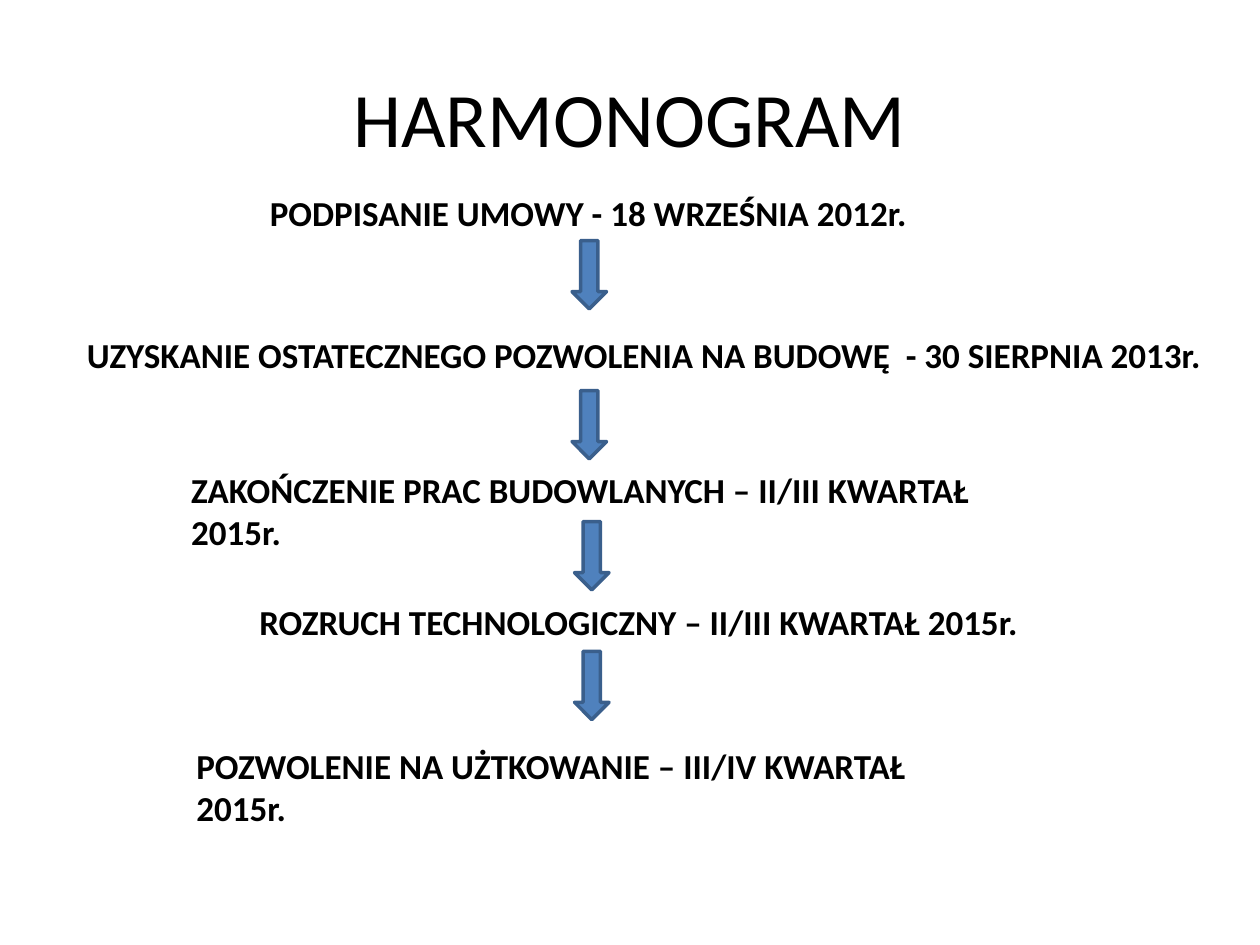
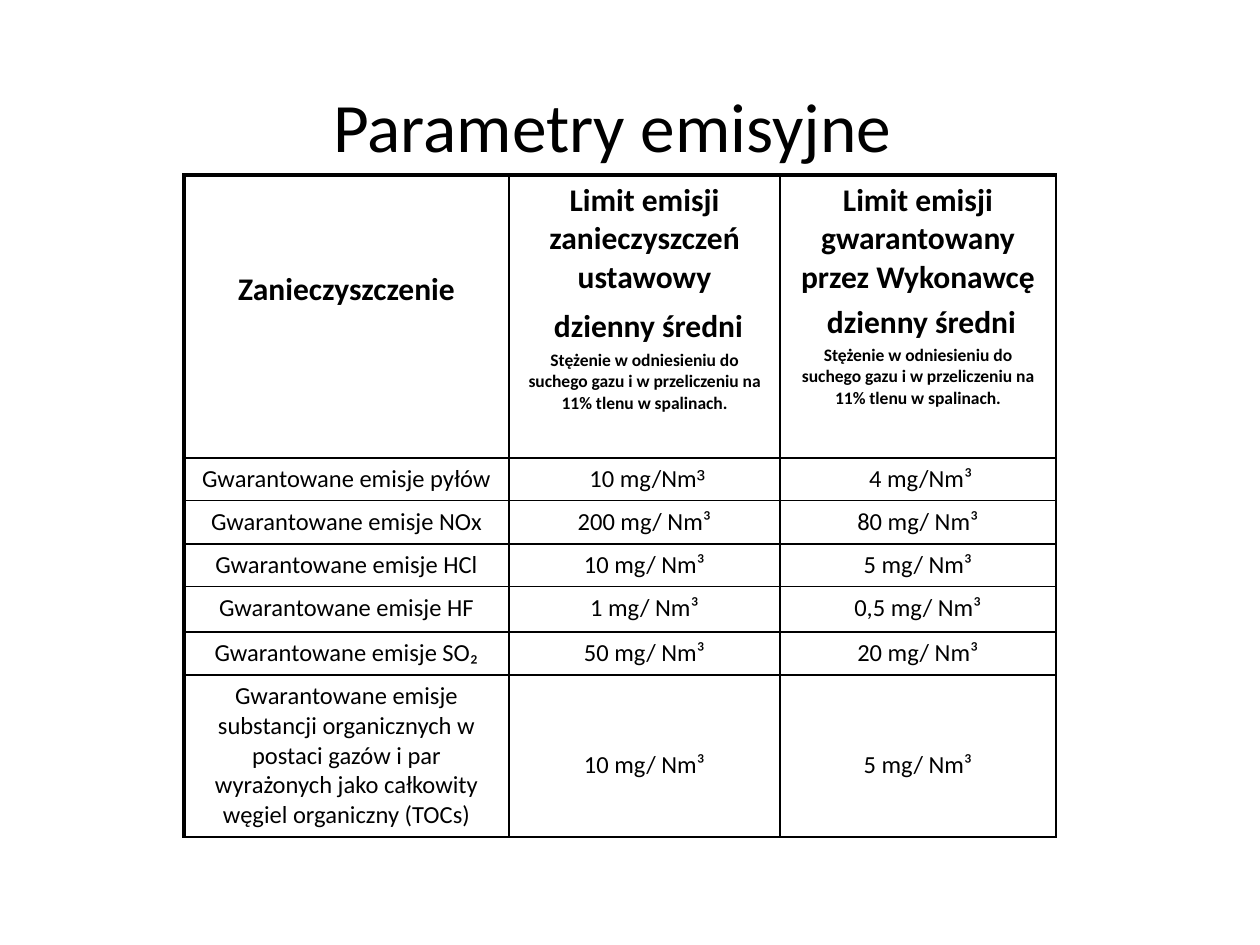
import pptx
import pptx.dml.color
import pptx.enum.shapes
import pptx.enum.text
import pptx.oxml
import pptx.oxml.ns
import pptx.util

Pt = pptx.util.Pt
ALIGN = pptx.enum.text.PP_ALIGN
ANCHOR = pptx.enum.text.MSO_ANCHOR
BLACK = pptx.dml.color.RGBColor(0x00, 0x00, 0x00)
ARROW_FILL = pptx.dml.color.RGBColor(0x4F, 0x81, 0xBD)
ARROW_LINE = pptx.dml.color.RGBColor(0x3A, 0x5F, 0x8C)
FONT = "Calibri"
TITLE_ONLY = 5
THIN, THICK = 1, 2.25


class Deck:
    """Holds the style and the current slide."""

    def __init__(self):
        self.prs = pptx.Presentation()
        self.prs.slide_width, self.prs.slide_height = Pt(720), Pt(540)
        self.slide = None

    def format_font(self, font, size, bold=False, name=FONT):
        values = {"name": name, "size": Pt(size), "bold": bold}
        for key, value in values.items():
            setattr(font, key, value)
        font.color.rgb = BLACK

    def new_slide(self, title, box, size, anchor=ANCHOR.MIDDLE):
        layout = self.prs.slide_layouts[TITLE_ONLY]
        self.slide = self.prs.slides.add_slide(layout)
        heading = self.slide.shapes.title
        for key, value in zip(("left", "top", "width", "height"), box):
            setattr(heading, key, Pt(value))
        frame = heading.text_frame
        frame.text = title
        frame.auto_size = pptx.enum.text.MSO_AUTO_SIZE.NONE
        frame.vertical_anchor = anchor
        if anchor == ANCHOR.BOTTOM:
            frame.margin_bottom = 0
        frame.paragraphs[0].alignment = ALIGN.CENTER
        self.format_font(frame.paragraphs[0].runs[0].font, size)

    def label(self, text, left, top, width, align=ALIGN.LEFT):
        box = self.slide.shapes.add_textbox(Pt(left), Pt(top), Pt(width), Pt(31.5))
        frame = box.text_frame
        frame.word_wrap = True
        frame.text = text
        frame.paragraphs[0].alignment = align
        self.format_font(frame.paragraphs[0].runs[0].font, 20, bold=True)

    def down_arrow(self, left, top):
        arrow = self.slide.shapes.add_shape(
            pptx.enum.shapes.MSO_SHAPE.DOWN_ARROW, Pt(left), Pt(top), Pt(19.7), Pt(39))
        arrow.shadow.inherit = False
        arrow.fill.solid()
        arrow.fill.fore_color.rgb = ARROW_FILL
        arrow.line.color.rgb = ARROW_LINE
        arrow.line.width = Pt(2)

    def table(self, left, top, widths, heights):
        frame = self.slide.shapes.add_table(
            len(heights), len(widths), Pt(left), Pt(top), Pt(sum(widths)), Pt(sum(heights)))
        grid = frame.table
        grid.first_row = grid.horz_banding = False
        for column, width in zip(grid.columns, widths):
            column.width = Pt(width)
        for row, height in zip(grid.rows, heights):
            row.height = Pt(height)
        return grid

    def fill_cell(self, cell, paragraphs, bold=False, margin_top=3.6):
        """Each paragraph is a list of (text, size, font) runs."""
        cell.margin_top = Pt(margin_top)
        frame = cell.text_frame
        for index, runs in enumerate(paragraphs):
            paragraph = frame.add_paragraph() if index else frame.paragraphs[0]
            paragraph.alignment = ALIGN.CENTER
            if index:
                paragraph.space_before = Pt(0.2 * runs[0][1])
            for text, size, name in runs:
                run = paragraph.add_run()
                run.text = text
                self.format_font(run.font, size, bold, name)

    def border_cell(self, cell, left, top):
        properties = cell._tc.get_or_add_tcPr()
        widths = {"lnL": left, "lnR": THIN, "lnT": top, "lnB": THIN}
        for side, width in widths.items():
            properties.append(pptx.oxml.parse_xml(
                f'<a:{side} {pptx.oxml.ns.nsdecls("a")} w="{Pt(width)}">'
                f'<a:solidFill><a:srgbClr val="{BLACK}"/></a:solidFill></a:{side}>'))
        cell.fill.background()


def build_schedule(deck):
    deck.new_slide("HARMONOGRAM", (36, 21.6, 648, 90), 44)

    # Milestones
    milestones = [
        ("PODPISANIE UMOWY - 18 WRZEŚNIA 2012r.", 100.8, 105.8, 471, ALIGN.CENTER),
        ("UZYSKANIE OSTATECZNEGO POZWOLENIA NA BUDOWĘ  - 30 SIERPNIA 2013r.",
         42.5, 187.2, 677.5),
        ("ZAKOŃCZENIE PRAC BUDOWLANYCH – II/III KWARTAŁ 2015r.", 102.2, 264.2, 510),
        ("ROZRUCH TECHNOLOGICZNY – II/III KWARTAŁ 2015r.", 141.1, 339.8, 466),
        ("POZWOLENIE NA UŻTKOWANIE – III/IV KWARTAŁ 2015r.", 105.1, 421.9, 470),
    ]
    for milestone in milestones:
        deck.label(*milestone)

    # Arrows between them
    for left, top in ((326.9, 137.5), (326.9, 223.2), (328.3, 298.1), (328.3, 372.2)):
        deck.down_arrow(left, top)


def build_emissions(deck):
    deck.new_slide("Parametry emisyjne", (116, 26, 468, 69), 39.6, ANCHOR.BOTTOM)
    limits = deck.table(105.1, 100.1, [185.8, 154.8, 157.7],
                        [161.7, 24.3, 24.8, 24.3, 26, 24.5, 92.6])

    # Header row
    basis = [("Stężenie w odniesieniu do suchego gazu i w przeliczeniu na "
              "11% tlenu w spalinach.", 10, FONT)]
    headers = [
        [[("Zanieczyszczenie", 18, FONT)]],
        [[("Limit emisji zanieczyszczeń ustawowy", 18, FONT)],
         [(" ", 20, FONT), ("dzienny średni", 18, FONT)], basis],
        [[("Limit emisji gwarantowany przez Wykonawcę", 18, FONT)],
         [(" dzienny średni", 18, FONT)], basis],
    ]
    for column, paragraphs in enumerate(headers):
        deck.fill_cell(limits.cell(0, column), paragraphs, bold=True,
                       margin_top=3.6 if column else 54.7)

    # Pollutants with statutory and guaranteed limits
    pollutants = [
        ("pyłów", " 10 mg/Nm³", " 4 mg/Nm³"),
        ("NOx", "200 mg/ Nm³", "80 mg/ Nm³"),
        ("HCl", "10 mg/ Nm³", "5 mg/ Nm³"),
        ("HF", "1 mg/ Nm³", "0,5 mg/ Nm³"),
        ("SO₂", "50 mg/ Nm³", "20 mg/ Nm³"),
        ("substancji organicznych w postaci gazów i par wyrażonych jako "
         "całkowity węgiel organiczny (TOCs)", "10 mg/ Nm³", "5 mg/ Nm³"),
    ]
    for row, (pollutant, *values) in enumerate(pollutants, 1):
        for column, text in enumerate([f"Gwarantowane emisje {pollutant}", *values]):
            runs = [(text, 14, FONT)]
            if (row, column) == (1, 1):
                runs = [(text[:-1], 14, FONT), (text[-1], 14, "Arial")]
            lowered = row == len(pollutants) and column > 0
            deck.fill_cell(limits.cell(row, column), [runs],
                           margin_top=43 if lowered else 3.6)

    # Borders, heavier along the left and top edges
    for row in range(len(limits.rows)):
        for column in range(len(limits.columns)):
            deck.border_cell(limits.cell(row, column),
                             THIN if column else THICK, THIN if row else THICK)


def main():
    deck = Deck()
    build_schedule(deck)
    build_emissions(deck)
    deck.prs.save("out.pptx")


if __name__ == "__main__":
    main()
